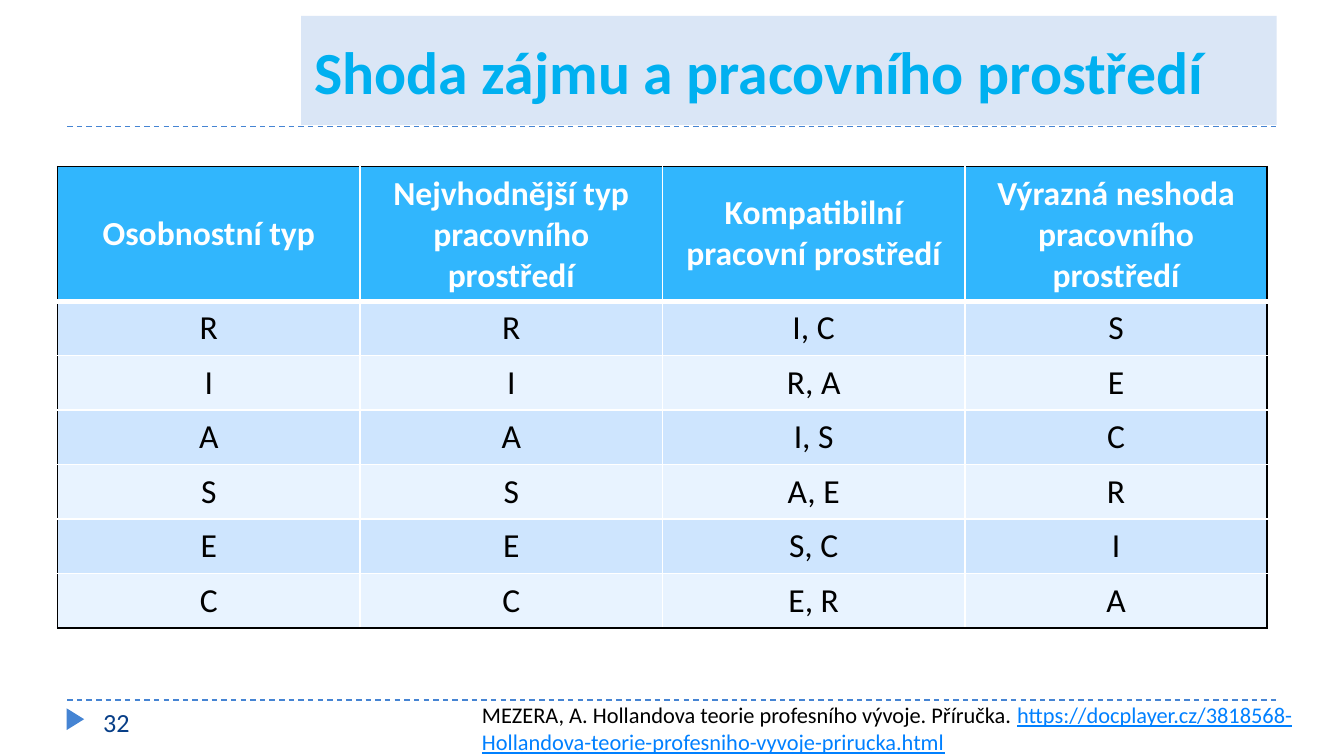
from dataclasses import dataclass

from lxml.etree import SubElement
from pptx import Presentation
from pptx.dml.color import RGBColor
from pptx.enum.dml import MSO_LINE
from pptx.enum.shapes import MSO_CONNECTOR, MSO_SHAPE
from pptx.enum.text import MSO_ANCHOR, MSO_AUTO_SIZE, PP_ALIGN
from pptx.oxml.ns import qn
from pptx.util import Cm, Pt

WHITE, BLACK, BLUE = "FFFFFF", "000000", "4584D3"
HEADER_FILL, BAND_FILLS = "31B6FD", ("CEE5FE", "E8F3FF")
ROWS = (
    ("Osobnostní typ", "Nejvhodnější typ pracovního prostředí",
     "Kompatibilní pracovní prostředí", "Výrazná neshoda pracovního prostředí"),
    ("R", "R", "I, C", "S"),
    ("I", "I", "R, A", "E"),
    ("A", "A", "I, S", "C"),
    ("S", "S", "A, E", "R"),
    ("E", "E", "S, C", "I"),
    ("C", "C", "E, R", "A"),
)


@dataclass(frozen=True)
class Box:
    left: float
    top: float
    width: float
    height: float

    def lengths(self) -> tuple:
        return Cm(self.left), Cm(self.top), Cm(self.width), Cm(self.height)


@dataclass(frozen=True)
class TextStyle:
    size: float
    color: str
    bold: bool = False
    underline: bool = False


def rgb(color: str) -> RGBColor:
    return RGBColor.from_string(color)


def format_run(run, style: TextStyle) -> None:
    run.font.name = "Calibri"
    run.font.size = Pt(style.size)
    run.font.bold = style.bold
    run.font.underline = style.underline
    run.font.color.rgb = rgb(style.color)


def add_dashed_line(slide, top: float) -> None:
    line = slide.shapes.add_connector(
        MSO_CONNECTOR.STRAIGHT, Cm(1.27), Cm(top), Cm(24.13), Cm(top))
    line.line.color.rgb = rgb(BLUE)
    line.line.width = Pt(0.75)
    line.line.dash_style = MSO_LINE.DASH
    SubElement(line._element.spPr, qn("a:effectLst"))


def add_page_marker(slide) -> None:
    marker = slide.shapes.add_shape(
        MSO_SHAPE.ISOSCELES_TRIANGLE, *Box(1.22, 13.43, 0.41, 0.33).lengths())
    marker.rotation = 90
    marker.shadow.inherit = False
    marker.fill.solid()
    marker.fill.fore_color.rgb = rgb(BLUE)
    marker.line.fill.background()


def format_title(slide) -> None:
    title = slide.shapes.title
    title.left, title.top, title.width, title.height = Box(5.69, 0.3, 18.44, 2.06).lengths()
    title.fill.solid()
    title.fill.fore_color.rgb = rgb("DAE6F6")
    frame = title.text_frame
    frame.text = "Shoda zájmu a pracovního prostředí"
    frame.auto_size = MSO_AUTO_SIZE.NONE
    frame.vertical_anchor = MSO_ANCHOR.MIDDLE
    paragraph = frame.paragraphs[0]
    paragraph.alignment = PP_ALIGN.LEFT
    format_run(paragraph.runs[0], TextStyle(32, "00B0F0", bold=True))


def add_text(slide, box: Box, parts: list[tuple[str, TextStyle]]) -> None:
    frame = slide.shapes.add_textbox(*box.lengths()).text_frame
    frame.word_wrap = True
    for text, style in parts:
        run = frame.paragraphs[0].add_run()
        run.text = text
        format_run(run, style)


def add_border(cell, side: str, color: str, width: float) -> None:
    border = SubElement(cell._tc.get_or_add_tcPr(), qn(f"a:ln{side}"), w=str(Pt(width)))
    fill = SubElement(border, qn("a:solidFill"))
    SubElement(fill, qn("a:srgbClr"), val=color)


def format_cell(cell, row: int, column: int) -> None:
    last_row, last_column = len(ROWS) - 1, len(ROWS[0]) - 1
    header = row == 0
    add_border(cell, "L", BLACK if column == 0 else WHITE, 1)
    add_border(cell, "R", BLACK if column == last_column else WHITE, 1)
    add_border(cell, "T", BLACK if header else WHITE, 3 if row == 1 else 1)
    add_border(cell, "B", BLACK if row == last_row else WHITE, 3 if header else 1)
    cell.fill.solid()
    cell.fill.fore_color.rgb = rgb(HEADER_FILL if header else BAND_FILLS[(row - 1) % 2])
    cell.vertical_anchor = MSO_ANCHOR.MIDDLE
    paragraph = cell.text_frame.paragraphs[0]
    paragraph.alignment = PP_ALIGN.CENTER
    format_run(paragraph.runs[0], TextStyle(18, WHITE if header else BLACK, bold=header))


def add_type_table(slide) -> None:
    table = slide.shapes.add_table(
        len(ROWS), len(ROWS[0]), *Box(1.09, 3.15, 22.86, 8.72).lengths()).table
    for row, texts in enumerate(ROWS):
        table.rows[row].height = Cm(2.54 if row == 0 else 1.03)
        for column, text in enumerate(texts):
            cell = table.cell(row, column)
            cell.text_frame.text = text
            format_cell(cell, row, column)


def main() -> None:
    presentation = Presentation()
    presentation.slide_width, presentation.slide_height = Cm(25.4), Cm(14.29)
    slide = presentation.slides.add_slide(presentation.slide_layouts[5])
    for top in (13.23, 2.39):
        add_dashed_line(slide, top)
    add_page_marker(slide)
    format_title(slide)
    add_text(slide, Box(1.7, 13.23, 5.51, 0.76), [("32", TextStyle(14, "073E87"))])
    add_type_table(slide)
    add_text(slide, Box(8.86, 13.13, 16.21, 1.27), [
        ("MEZERA, A. Hollandova teorie profesního vývoje. Příručka. ", TextStyle(12, BLACK)),
        ("https://docplayer.cz/3818568-Hollandova-teorie-profesniho-vyvoje-prirucka.html",
         TextStyle(12, "0080FF", underline=True)),
    ])
    presentation.save("out.pptx")


if __name__ == "__main__":
    main()
